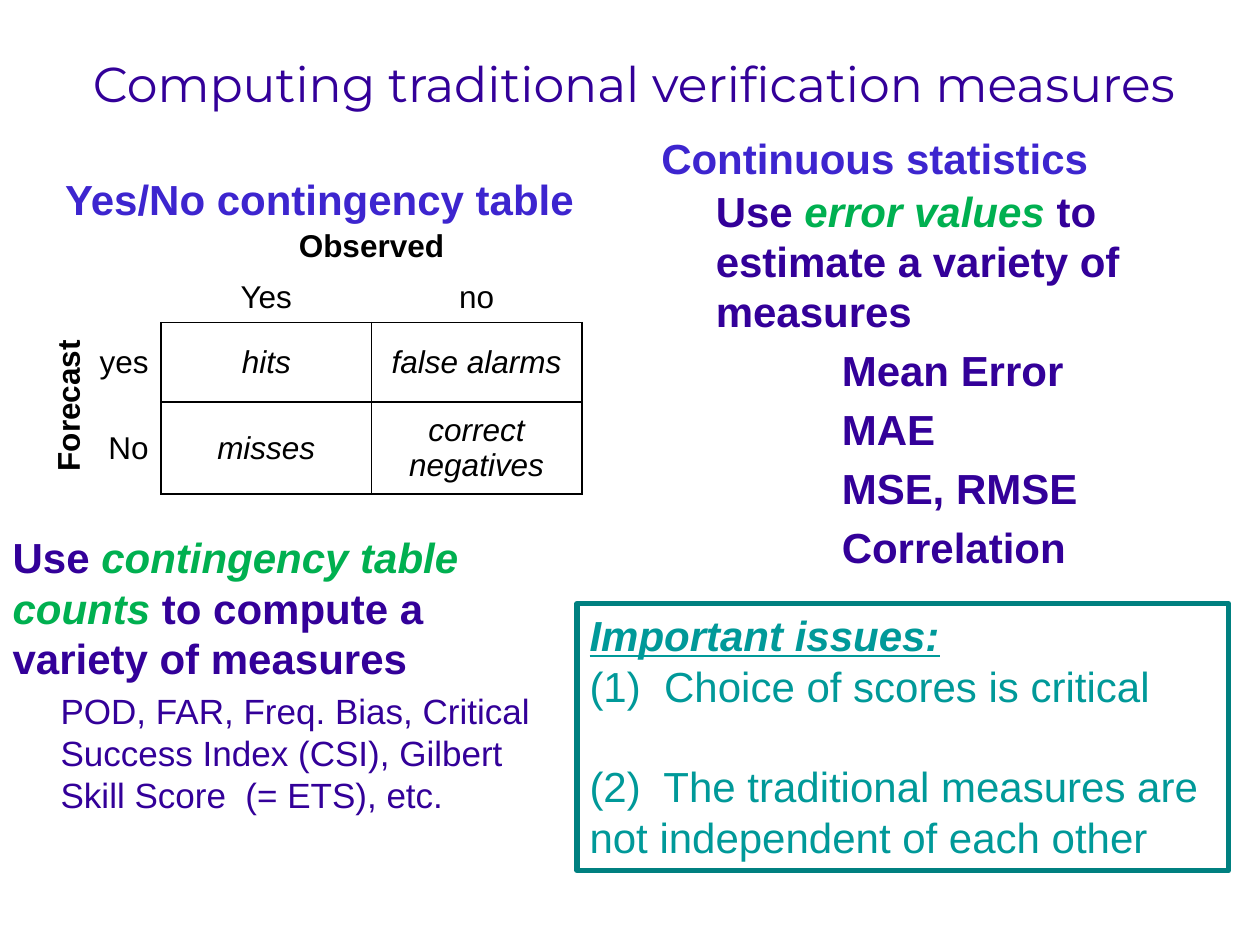
"""Builds a slide on computing traditional verification measures."""
from lxml import etree
from pptx import Presentation
from pptx.dml.color import RGBColor
from pptx.enum.shapes import MSO_SHAPE
from pptx.enum.text import MSO_ANCHOR, PP_ALIGN
from pptx.oxml.ns import qn
from pptx.util import Pt

RECT = MSO_SHAPE.RECTANGLE
TOP, MIDDLE = MSO_ANCHOR.TOP, MSO_ANCHOR.MIDDLE
LEFT, CENTER, RIGHT = PP_ALIGN.LEFT, PP_ALIGN.CENTER, PP_ALIGN.RIGHT

HUES = {"ink": "330099", "green": "00B050", "head": "3D25CF", "black": "000000",
        "teal": "009999", "edge": "008080", "white": "FFFFFF"}

TITLE = "Computing traditional verification measures"
HEADS = [("Yes/No contingency table", 30.2, 95.8),
         ("Continuous statistics", 370.8, 72)]
# Each paragraph: runs, size, bold, indent, space before
COUNTS = [
    (["Use ", "contingency table counts ", "to compute a variety of measures"],
     24, True, 0, 0),
    (["POD, FAR, Freq. Bias, Critical Success Index (CSI), "
      "Gilbert Skill Score  (= ETS), etc."], 20, False, 27.4, 4),
]
ERRORS = [(["Use ", "error values ", "to estimate a variety of measures"],
           24, True, 0, 0)]
ERRORS += [([name], 24, True, 72, 4.8)
           for name in ("Mean Error", "MAE", "MSE, RMSE", "Correlation")]
BODIES = [(COUNTS, (0, 300.2, 318.2, 221.8)),
          (ERRORS, (401.8, 102.2, 318.2, 374.4))]
GRID = [["", "Observed", ""],
        ["", "Yes", "no"],
        ["yes", "hits", "false alarms"],
        ["No", "misses", "correct negatives"]]
COLS = [69.1, 120.2, 120.2]
ROWS = [28.8, 28.1, 45.4, 52.6]
ISSUES = ["Important issues:", "(1)  Choice of scores is critical",
          "(2)  The traditional measures are not independent of each other"]


def style(run, size, hue, bold=False, italic=False, face="Arial"):
    font = run.font
    font.name, font.size, font.bold, font.italic = face, Pt(size), bold, italic
    font.color.rgb = RGBColor.from_string(HUES[hue])


def place(shape, box):
    shape.left, shape.top, shape.width, shape.height = map(Pt, box)


def label(slide, text, box, size, hue, align=LEFT):
    shape = slide.shapes.add_textbox(*map(Pt, box))
    frame = shape.text_frame
    frame.word_wrap = True
    frame.text = text
    para = frame.paragraphs[0]
    para.alignment = align
    style(para.runs[0], size, hue, True)
    return shape


def fill_body(shape, paras, box):
    place(shape, box)
    frame = shape.text_frame
    frame.vertical_anchor = TOP
    for i, (parts, size, bold, indent, gap) in enumerate(paras):
        para = frame.paragraphs[0] if i == 0 else frame.add_paragraph()
        props = para._p.get_or_add_pPr()
        props.set("marL", str(Pt(indent)))
        props.set("indent", "0")
        etree.SubElement(props, qn("a:buNone"))
        para.space_before = Pt(gap)
        for j, part in enumerate(parts):
            run = para.add_run()
            run.text = part
            style(run, size, "green" if j == 1 else "ink", bold, j == 1)


def border(cell, row, col):
    inner = row > 1 and col > 0
    drawn = {"L": inner, "R": inner or (row > 1 and col == 0),
             "T": inner, "B": inner or (row == 1 and col > 0)}
    props = cell._tc.get_or_add_tcPr()
    for side, shown in drawn.items():
        line = etree.SubElement(props, qn("a:ln" + side), w=str(Pt(1)))
        if shown:
            fill = etree.SubElement(line, qn("a:solidFill"))
            etree.SubElement(fill, qn("a:srgbClr"), val=HUES["black"])
        else:
            etree.SubElement(line, qn("a:noFill"))


def add_grid(slide):
    frame = slide.shapes.add_table(len(ROWS), len(COLS), Pt(23), Pt(126),
                                   Pt(sum(COLS)), Pt(sum(ROWS)))
    table = frame.table
    table.first_row = table.horz_banding = False
    for col, width in zip(table.columns, COLS):
        col.width = Pt(width)
    for row, height in zip(table.rows, ROWS):
        row.height = Pt(height)
    table.cell(0, 1).merge(table.cell(0, 2))
    for r, row in enumerate(GRID):
        for c, text in enumerate(row):
            cell = table.cell(r, c)
            border(cell, r, c)
            cell.fill.background()
            cell.vertical_anchor = MIDDLE
            if text:
                cell.text_frame.text = text
                para = cell.text_frame.paragraphs[0]
                para.alignment = CENTER if c else RIGHT
                style(para.runs[0], 18, "black", r == 0, r > 1 and c > 0)


def add_issues(slide):
    shape = slide.shapes.add_shape(RECT, *map(Pt, (329.8, 344.9, 372.2, 152.6)))
    shape.shadow.inherit = False
    shape.fill.solid()
    shape.fill.fore_color.rgb = RGBColor.from_string(HUES["white"])
    shape.line.color.rgb = RGBColor.from_string(HUES["edge"])
    shape.line.width = Pt(3)
    frame = shape.text_frame
    frame.word_wrap = True
    frame.vertical_anchor = TOP
    frame.text = "\n".join(ISSUES)
    for i, para in enumerate(frame.paragraphs):
        para.alignment = LEFT
        style(para.runs[0], 24, "teal", i == 0, i == 0)
        para.runs[0].font.underline = i == 0
    frame.paragraphs[-1].space_before = Pt(28.8)


def main():
    deck = Presentation()
    deck.slide_width, deck.slide_height = Pt(720), Pt(540)
    slide = deck.slides.add_slide(deck.slide_layouts[3])
    title, *bodies = list(slide.placeholders)[:3]
    place(title, (41.8, 10.8, 640.8, 72.7))
    title.text_frame.text = TITLE
    title.text_frame.vertical_anchor = MIDDLE
    style(title.text_frame.paragraphs[0].runs[0], 28, "ink", face="Montserrat")
    for shape, (paras, box) in zip(bodies, BODIES):
        fill_body(shape, paras, box)
    add_grid(slide)
    side = label(slide, "Forecast", (-11.5, 217.4, 100, 28.8), 18, "black", CENTER)
    side.rotation = 270
    for text, left, top in HEADS:
        label(slide, text, (left, top, 321.8, 36), 24, "head")
    add_issues(slide)
    deck.save("out.pptx")


if __name__ == "__main__":
    main()
